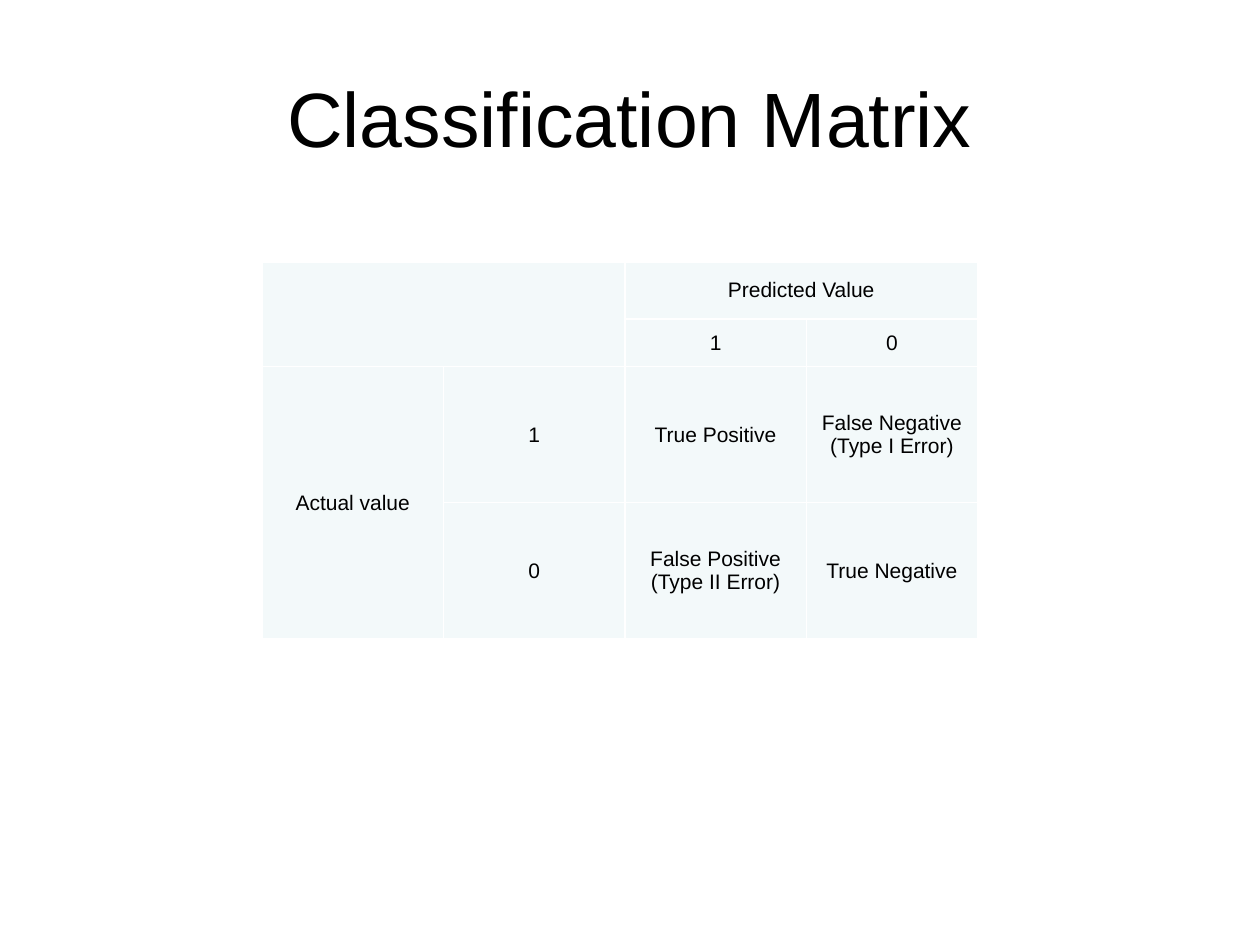
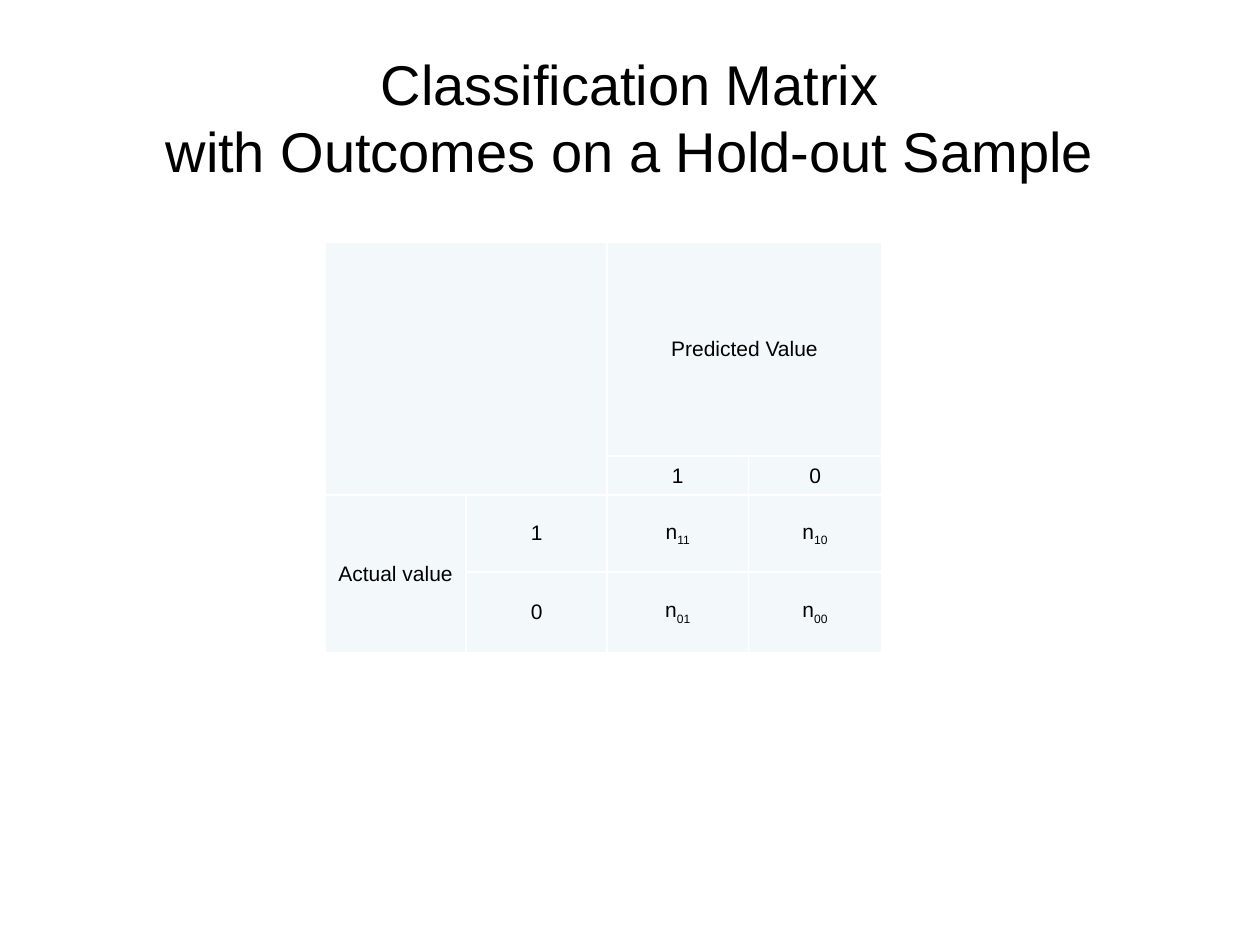
from dataclasses import dataclass

from lxml.etree import SubElement
from pptx import Presentation
from pptx.dml.color import RGBColor as RGB
from pptx.enum.text import MSO_ANCHOR as Anchor, PP_ALIGN as Align
from pptx.oxml.ns import qn
from pptx.util import Inches, Pt


@dataclass(frozen=True)
class Theme:
    font: str = "Arial"
    ink: RGB = RGB(0, 0, 0)
    tint: RGB = RGB(0xF3, 0xF9, 0xFA)
    rule: str = "FFFFFF"
    rule_width: int = Pt(1)
    title: int = 44
    long_title: int = 32
    body: int = 12


THEME = Theme()
BLANK = 6

# Cells that span several rows or columns: first and last corner.
SPANS = [((0, 0), (1, 1)), ((0, 2), (0, 3)), ((2, 0), (3, 0))]


def put_text(frame, text, size=THEME.body, color=THEME.ink, align=Align.CENTER):
    """Write text: \\n parts paragraphs, \\v breaks a line, _ starts a subscript."""
    for i, part in enumerate(text.split("\n")):
        para = frame.add_paragraph() if i else frame.paragraphs[0]
        para.alignment = align
        for j, line in enumerate(part.split("\v")):
            if j:
                para.add_line_break()
            for k, piece in enumerate(line.split("_")):
                run = para.add_run()
                run.text = piece
                font = run.font
                font.name, font.size = THEME.font, Pt(size)
                font.color.rgb = color
                if k:
                    font._element.set("baseline", "-25000")


def add_title(slide, text, size):
    box = slide.shapes.add_textbox(Inches(0.5), Inches(0.3), Inches(9), Inches(1.25))
    frame = box.text_frame
    frame.word_wrap = True
    frame.vertical_anchor = Anchor.MIDDLE
    put_text(frame, text, size=size)


def add_rules(cell):
    """Draw the thin line on all four sides of a cell."""
    props = cell._tc.get_or_add_tcPr()
    for side in ("lnL", "lnR", "lnT", "lnB"):
        line = SubElement(props, qn(f"a:{side}"), w=str(THEME.rule_width))
        fill = SubElement(line, qn("a:solidFill"))
        SubElement(fill, qn("a:srgbClr"), val=THEME.rule)


def style_cell(cell):
    add_rules(cell)
    cell.fill.solid()
    cell.fill.fore_color.rgb = THEME.tint
    cell.vertical_anchor = Anchor.MIDDLE
    cell.margin_left = cell.margin_right = Inches(0.07)
    cell.margin_top = cell.margin_bottom = 0


def add_matrix(slide, left, top, widths, heights, hits, misses):
    """Add a matrix; hits and misses are the outcomes for actual 1 and 0."""
    rows = [
        ["", "", "Predicted Value", ""],
        ["", "", "1", "0"],
        ["Actual value", "1", *hits],
        ["", "0", *misses],
    ]
    frame = slide.shapes.add_table(
        len(heights), len(widths), Inches(left), Inches(top),
        Inches(sum(widths)), Inches(sum(heights)))
    table = frame.table
    table.first_row = table.horz_banding = False
    for col, width in zip(table.columns, widths):
        col.width = Inches(width)
    for row, height in zip(table.rows, heights):
        row.height = Inches(height)
    for start, end in SPANS:
        table.cell(*start).merge(table.cell(*end))
    for r, row in enumerate(rows):
        for c, text in enumerate(row):
            cell = table.cell(r, c)
            style_cell(cell)
            if text:
                put_text(cell.text_frame, text)


def main():
    deck = Presentation()
    deck.slide_width, deck.slide_height = Inches(10), Inches(7.5)
    blank = deck.slide_layouts[BLANK]

    slide = deck.slides.add_slide(blank)
    add_title(slide, "Classification Matrix", THEME.title)
    add_matrix(
        slide, 2.08, 2.08, [1.44] * 3 + [1.36], [0.45, 0.38, 1.08, 1.08],
        hits=["True Positive", "False Negative\n(Type I Error)"],
        misses=["False Positive\n(Type II Error)", "True Negative"])

    slide = deck.slides.add_slide(blank)
    add_title(slide, "Classification Matrix\vwith Outcomes on a Hold-out Sample",
              THEME.long_title)
    add_matrix(
        slide, 2.58, 1.92, [1.12] * 3 + [1.06], [1.7, 0.31, 0.61, 0.64],
        hits=["n_11", "n_10"], misses=["n_01", "n_00"])

    deck.save("out.pptx")


if __name__ == "__main__":
    main()
